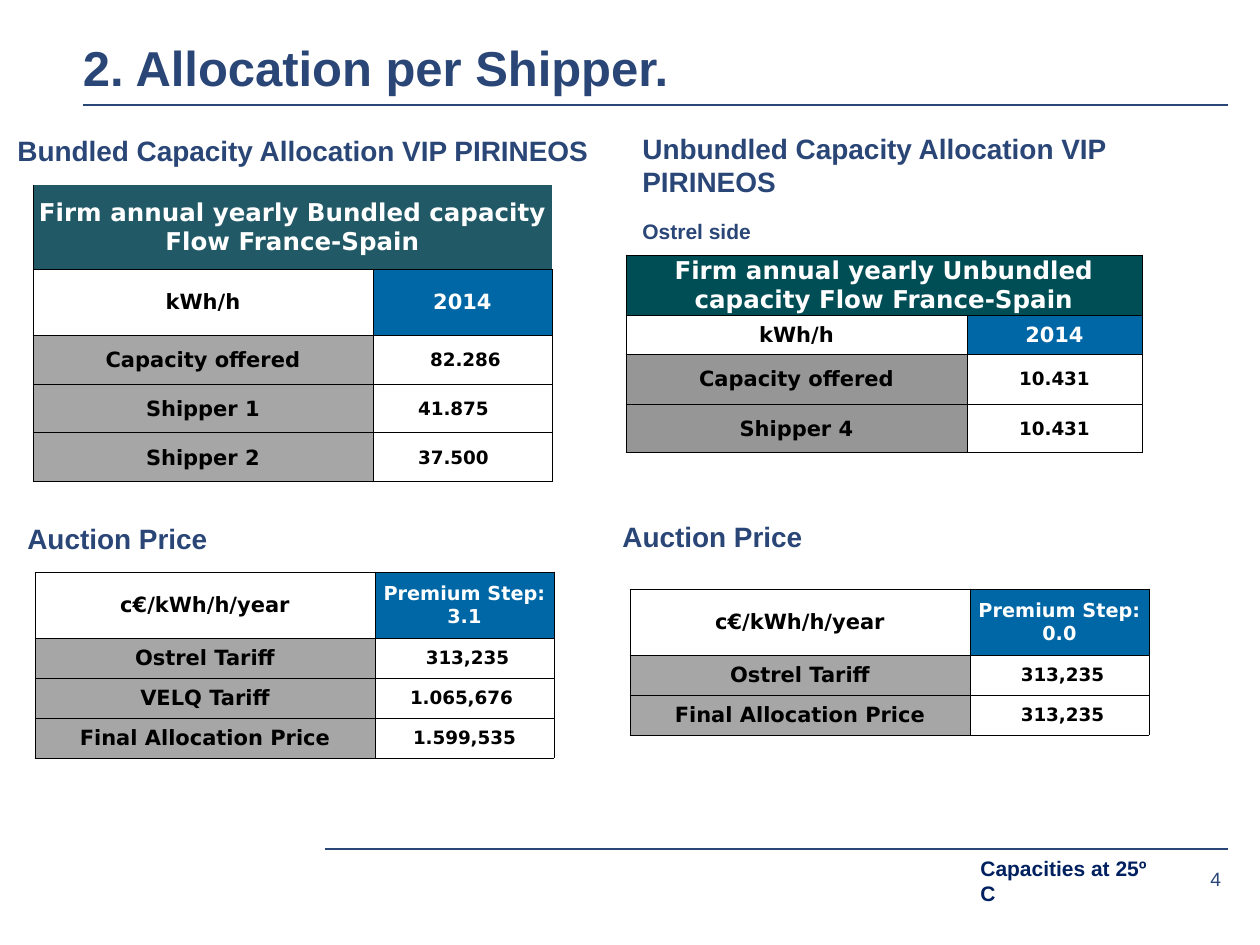
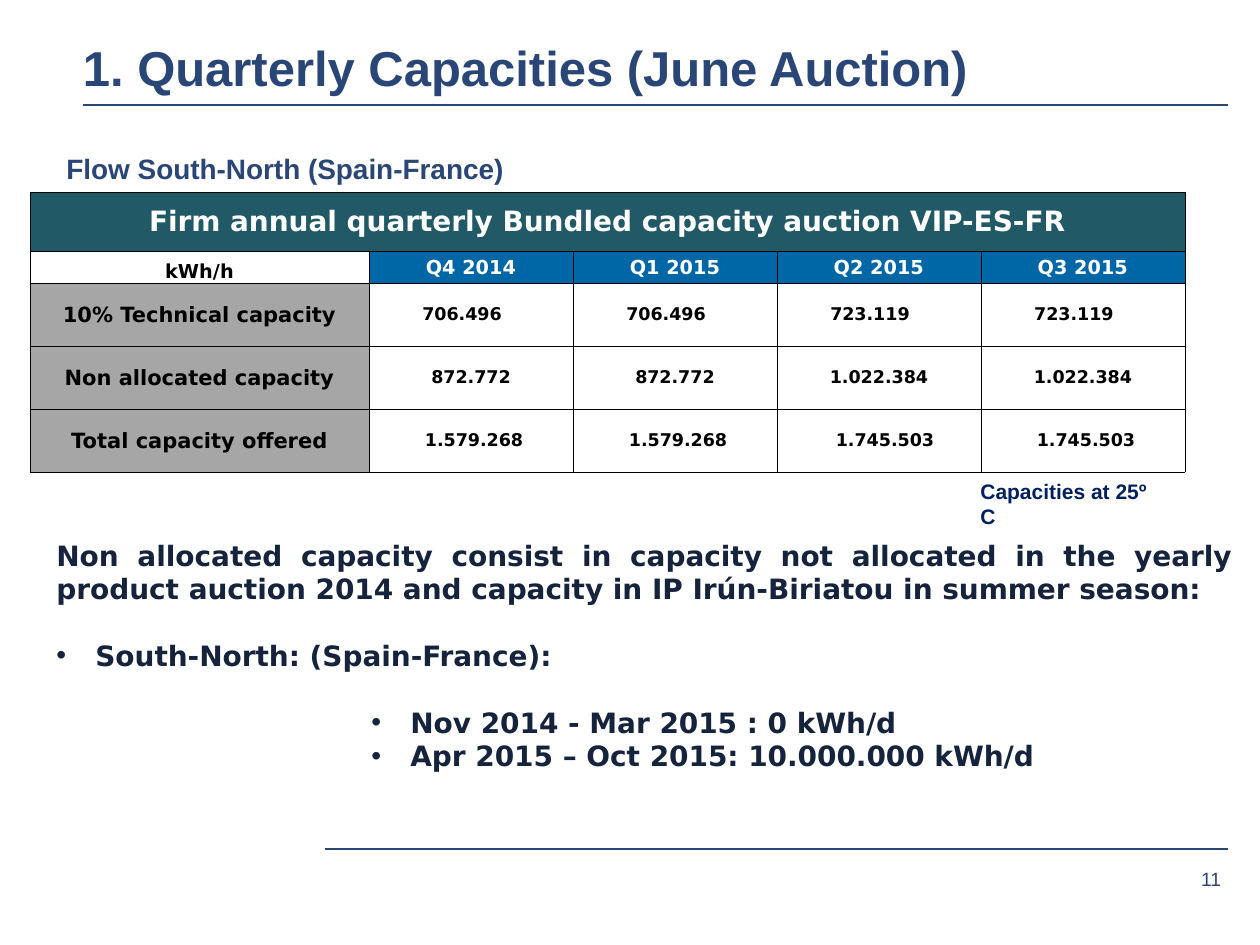
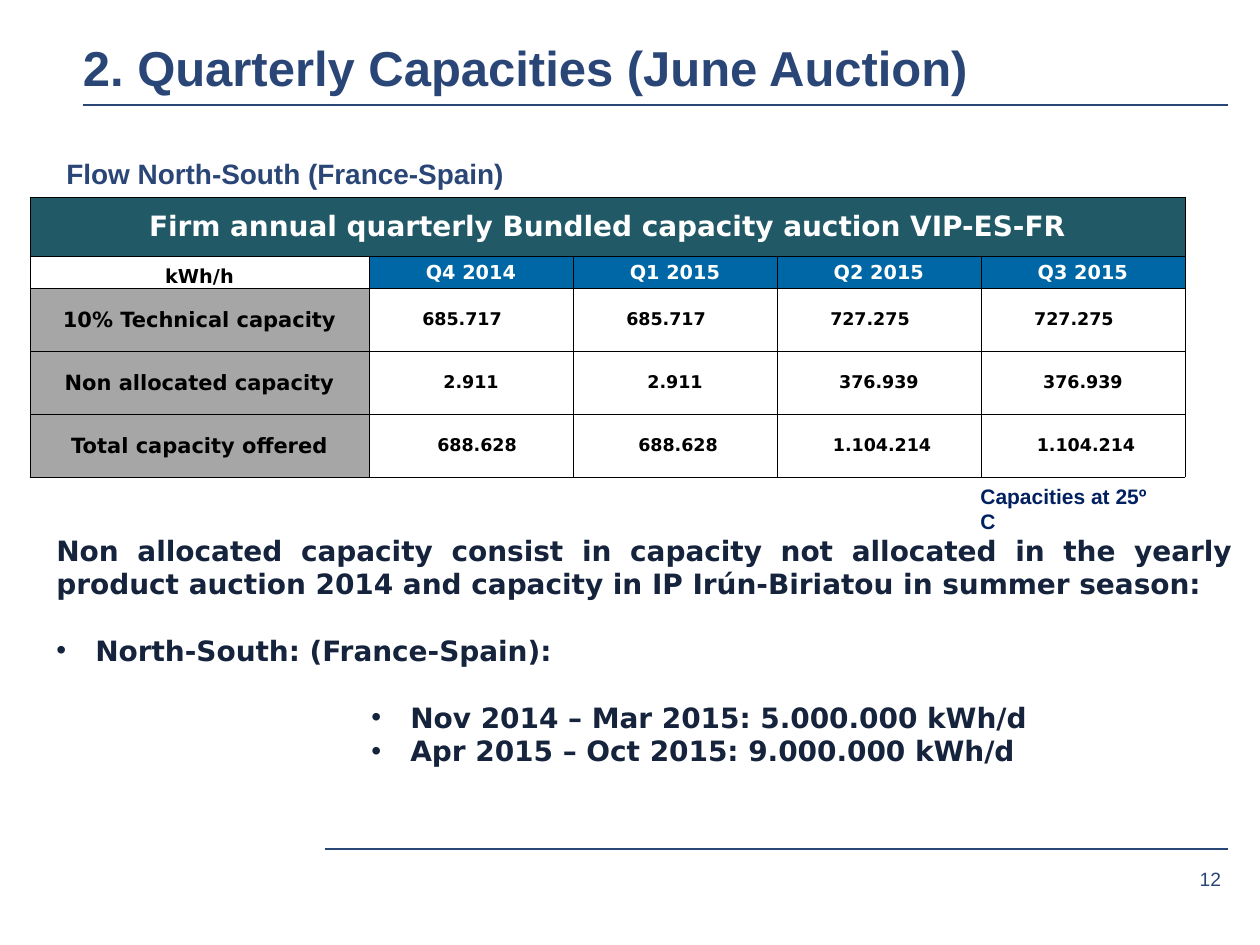
from lxml import etree
from pptx import Presentation
from pptx import util as u
from pptx.dml.color import RGBColor
from pptx.enum import shapes, text
from pptx.oxml import ns

COLORS = {
    "navy": "2A4677",
    "note": "002060",
    "body": "15233C",
    "teal": "215967",
    "deep teal": "004E55",
    "blue": "0067A6",
    "grey": "A6A6A6",
    "dark grey": "969696",
    "white": "FFFFFF",
    "black": "000000",
}
SANS = "Arial"
TABLE_FONT = "DejaVu Sans"
ALIGN = text.PP_ALIGN
ANCHOR = text.MSO_ANCHOR
LINE_GAP = 19
SPACE = 6


def px(length):
    return u.Emu(round(length * 914400 / 126))


def color(name):
    return RGBColor.from_string(COLORS[name])


def add_run(paragraph, words, size, ink, font=SANS, bold=True):
    run = paragraph.add_run()
    run.text = words
    run.font.name = font
    run.font.size = u.Pt(size)
    run.font.bold = bold
    run.font.color.rgb = color(ink)


def add_frame(slide, box, inset=True, anchor=ANCHOR.TOP):
    frame = slide.shapes.add_textbox(*map(px, box)).text_frame
    frame.word_wrap = True
    frame.vertical_anchor = anchor
    if not inset:
        frame.margin_left = frame.margin_right = 0
        frame.margin_top = frame.margin_bottom = 0
    return frame


def add_rule(slide, left, right, top):
    line = slide.shapes.add_connector(
        shapes.MSO_CONNECTOR.STRAIGHT, px(left), px(top), px(right), px(top))
    line.line.color.rgb = color("navy")
    line.line.width = u.Pt(1.5)
    etree.SubElement(line._element.spPr, ns.qn("a:effectLst"))


def add_base_slide(presentation, title, number):
    slide = presentation.slides.add_slide(presentation.slide_layouts[6])
    add_rule(slide, 83, 1228, 105)
    add_rule(slide, 325, 1228, 849)
    frame = add_frame(slide, (83, 45, 1148, 51), False, ANCHOR.BOTTOM)
    add_run(frame.paragraphs[0], title, 28, "navy")
    frame = add_frame(slide, (1126, 859, 95, 39), False, ANCHOR.MIDDLE)
    frame.paragraphs[0].alignment = ALIGN.RIGHT
    add_run(frame.paragraphs[0], str(number), 11, "navy", bold=False)
    return slide


def add_heading(slide, left, top, words, width=635, height=47, size=16):
    paragraph = add_frame(slide, (left, top, width, height)).paragraphs[0]
    paragraph.space_after = u.Pt(6)
    add_run(paragraph, words, size, "navy")


def add_note(slide, top):
    frame = add_frame(slide, (968, top, 205, 63))
    add_run(frame.paragraphs[0], "Capacities at 25º C", 12, "note")


def set_borders(cell, edges):
    properties = cell._tc.get_or_add_tcPr()
    for edge in "LRTB":
        border = etree.SubElement(properties, ns.qn(f"a:ln{edge}"), w="6350")
        if edge in edges:
            fill = etree.SubElement(border, ns.qn("a:solidFill"))
            etree.SubElement(fill, ns.qn("a:srgbClr"), val=COLORS["black"])
        else:
            etree.SubElement(border, ns.qn("a:noFill"))


def style_cell(cell, fill, edges="LRTB"):
    set_borders(cell, edges)
    cell.fill.solid()
    cell.fill.fore_color.rgb = color(fill)


def write_cell(cell, content, size, ink, anchor=ANCHOR.MIDDLE):
    words, shift = content if isinstance(content, tuple) else (content, 0)
    cell.margin_left = px(1 + max(shift, 0))
    cell.margin_right = px(1 + max(-shift, 0))
    cell.margin_top = px(1)
    cell.margin_bottom = 0
    cell.vertical_anchor = anchor
    paragraph = cell.text_frame.paragraphs[0]
    paragraph.alignment = ALIGN.CENTER
    add_run(paragraph, words, size, ink, TABLE_FONT)


def add_capacity_table(slide, left, top, widths, heights, rows, title=None,
                       title_size=14, title_fill="teal", title_edges="LRTB",
                       unit_size=12, unit_anchor=ANCHOR.MIDDLE,
                       period_size=12, label_fill="grey", value_size=10.5):
    frame = slide.shapes.add_table(
        len(heights), len(widths), px(left), px(top),
        px(sum(widths)), px(sum(heights)))
    table = frame.table
    table.first_row = table.horz_banding = False
    for column, width in zip(table.columns, widths):
        column.width = px(width)
    for row, height in zip(table.rows, heights):
        row.height = px(height)
    first = 0
    if title:
        first = 1
        for index in range(len(widths)):
            style_cell(table.cell(0, index), title_fill, title_edges)
        table.cell(0, 0).merge(table.cell(0, len(widths) - 1))
        write_cell(table.cell(0, 0), title, title_size, "white")
    for row_index, row in enumerate(rows):
        for column_index, content in enumerate(row):
            cell = table.cell(first + row_index, column_index)
            if row_index == 0 and column_index == 0:
                style_cell(cell, "white")
                write_cell(cell, content, unit_size, "black", unit_anchor)
            elif row_index == 0:
                style_cell(cell, "blue")
                write_cell(cell, content, period_size, "white")
            elif column_index == 0:
                style_cell(cell, label_fill)
                write_cell(cell, content, 12, "black")
            else:
                style_cell(cell, "white")
                write_cell(cell, content, value_size, "black")


def add_price_table(slide, left, top, step, prices):
    rows = [("c€/kWh/h/year", f"Premium Step: {step}"), *prices]
    heights = [66] + [40] * len(prices)
    add_capacity_table(slide, left, top, (340, 179), heights, rows, period_size=11)


def add_bundled_column(slide, left):
    add_heading(slide, left, 127, "Bundled Capacity Allocation VIP PIRINEOS")
    add_capacity_table(
        slide, left + 28, 185, (340, 179), (84, 66, 49, 49, 49),
        [("kWh/h", "2014"),
         ("Capacity offered", ("82.286", SPACE)),
         ("Shipper 1", ("41.875", -3 * SPACE)),
         ("Shipper 2", ("37.500", -3 * SPACE))],
        title="Firm annual yearly Bundled capacity Flow France-Spain",
        title_edges="LB")
    add_heading(slide, left + 10, 515, "Auction Price")
    add_price_table(
        slide, left + 30, 572, "3.1",
        [("Ostrel Tariff", ("313,235", SPACE)),
         ("VELQ Tariff", ("1.065,676", -SPACE)),
         ("Final Allocation Price", "1.599,535")])


def add_unbundled_column(slide, left):
    add_heading(slide, left + 20, 125, "Unbundled Capacity Allocation VIP PIRINEOS",
                width=576, height=81)
    add_heading(slide, left + 20, 212, "Ostrel side", width=558, height=38, size=12)
    add_capacity_table(
        slide, left + 16, 255, (341, 175), (60, 39, 50, 49),
        [("kWh/h", "2014"),
         ("Capacity offered", "10.431"),
         ("Shipper 4", "10.431")],
        title="Firm annual yearly Unbundled capacity Flow France-Spain",
        title_fill="deep teal", label_fill="dark grey")
    add_heading(slide, left, 513, "Auction Price")
    add_price_table(
        slide, left + 20, 589, "0.0",
        [("Ostrel Tariff", ("313,235", SPACE)),
         ("Final Allocation Price", ("313,235", SPACE))])


def add_allocation_slide(presentation):
    slide = add_base_slide(presentation, "2. Allocation per Shipper.", 4)
    add_bundled_column(slide, 5)
    add_unbundled_column(slide, 610)
    add_note(slide, 849)


def add_bullet(paragraph, margin):
    properties = paragraph._p.get_or_add_pPr()
    properties.set("marL", str(px(margin)))
    properties.set("indent", str(px(-39)))
    etree.SubElement(properties, ns.qn("a:buFont"), typeface=SANS)
    etree.SubElement(properties, ns.qn("a:buChar"), char="•")


def add_explanation(slide, top, direction, periods):
    frame = add_frame(slide, (44, top, 1201, 251))
    lines = [
        ("Non allocated capacity consist in capacity not allocated in the yearly "
         "product auction 2014 and capacity in IP Irún-Biriatou in summer season:", 0, 0),
        (f"{direction}:", 39, LINE_GAP),
        (periods[0], 354, LINE_GAP),
        (periods[1], 354, 0),
    ]
    for index, (words, margin, gap) in enumerate(lines):
        paragraph = frame.add_paragraph() if index else frame.paragraphs[0]
        if margin:
            add_bullet(paragraph, margin)
        paragraph.alignment = ALIGN.JUSTIFY
        if gap:
            paragraph.space_before = u.Pt(gap)
        add_run(paragraph, words, 16, "body", TABLE_FONT)


def add_quarterly_slide(presentation, title, number, flow, table_top,
                        explanation_top, direction, periods, technical, free, total):
    slide = add_base_slide(presentation, title, number)
    add_heading(slide, 54, table_top - 47, flow, width=558)
    add_capacity_table(
        slide, 30, table_top, [339] + [204] * 4, [59, 32] + [63] * 3,
        [("kWh/h", "Q4 2014", "Q1 2015", "Q2 2015", "Q3 2015"),
         ("10% Technical capacity", *((value, -3 * SPACE) for value in technical)),
         ("Non allocated capacity", *free),
         ("Total capacity offered", *total)],
        title="Firm annual quarterly Bundled capacity auction VIP-ES-FR",
        title_size=16, unit_size=11, unit_anchor=ANCHOR.BOTTOM,
        period_size=11, value_size=10)
    add_note(slide, table_top + 280)
    add_explanation(slide, explanation_top, direction, periods)


def main():
    presentation = Presentation()
    presentation.slide_width = px(1260)
    presentation.slide_height = px(945)
    add_allocation_slide(presentation)
    add_quarterly_slide(
        presentation, "1. Quarterly Capacities (June Auction)", 11,
        "Flow South-North (Spain-France)", 192, 532,
        "South-North: (Spain-France)",
        ("Nov 2014 - Mar 2015 : 0 kWh/d", "Apr 2015 – Oct 2015: 10.000.000 kWh/d"),
        technical=("706.496", "706.496", "723.119", "723.119"),
        free=("872.772", "872.772", "1.022.384", "1.022.384"),
        total=(("1.579.268", SPACE), ("1.579.268", SPACE),
               ("1.745.503", 2 * SPACE), ("1.745.503", SPACE)))
    add_quarterly_slide(
        presentation, "2. Quarterly Capacities (June Auction)", 12,
        "Flow North-South (France-Spain)", 197, 527,
        "North-South: (France-Spain)",
        ("Nov 2014 – Mar 2015: 5.000.000 kWh/d", "Apr 2015 – Oct 2015: 9.000.000 kWh/d"),
        technical=("685.717", "685.717", "727.275", "727.275"),
        free=("2.911", "2.911", "376.939", "376.939"),
        total=(("688.628", 2 * SPACE), ("688.628", SPACE),
               ("1.104.214", SPACE), ("1.104.214", SPACE)))
    presentation.save("out.pptx")


if __name__ == "__main__":
    main()
